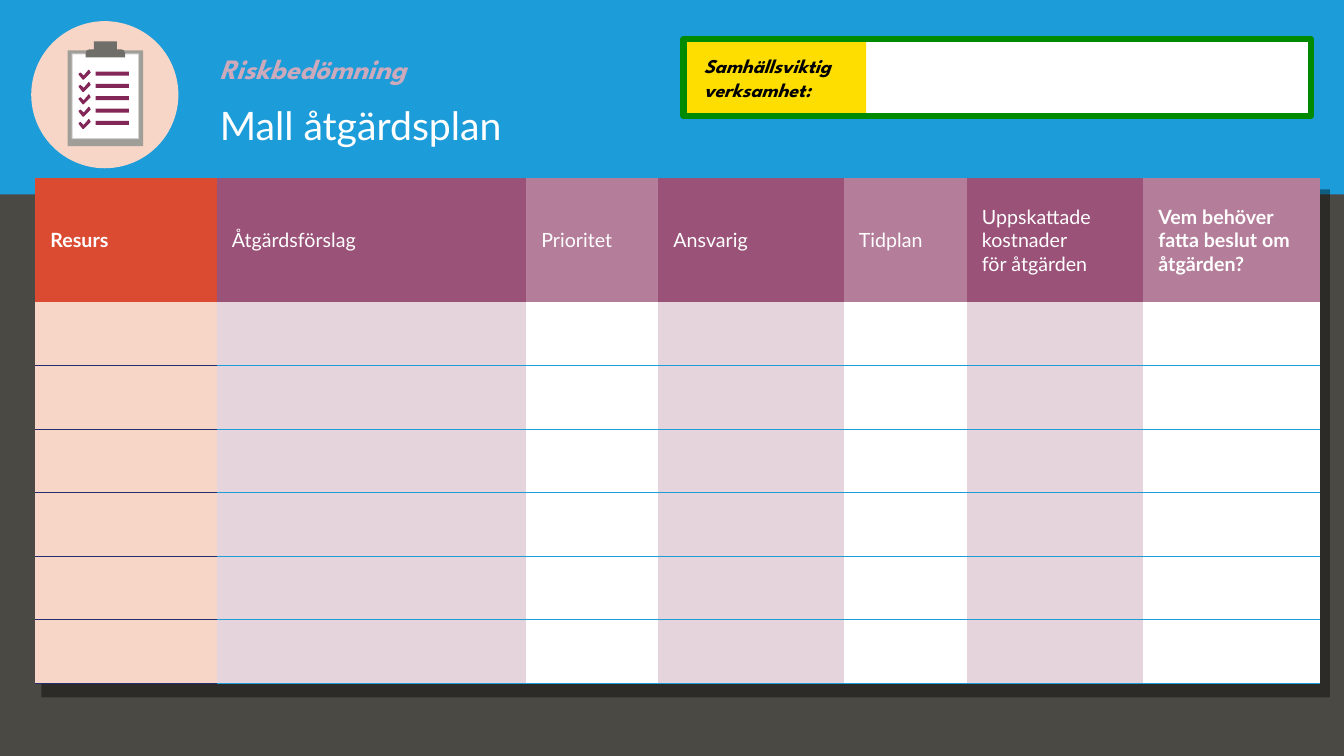
from lxml.etree import SubElement
from pptx import Presentation
from pptx.dml.color import RGBColor
from pptx.enum.shapes import MSO_SHAPE as Shape
from pptx.enum.text import MSO_ANCHOR as Anchor, PP_ALIGN as Align
from pptx.oxml import parse_xml
from pptx.oxml.ns import nsdecls, qn
from pptx.util import Inches, Pt

HEADERS = [
    ("Resurs", 1.8, "DB4B32", "F8D6C7", True),
    ("Åtgärdsförslag", 3.07, "9B5279", "E6D4DD", False),
    ("Prioritet", 1.31, "B47D9A", "FFFFFF", False),
    ("Ansvarig", 1.84, "9B5279", "E6D4DD", False),
    ("Tidplan", 1.22, "B47D9A", "FFFFFF", False),
    ("Uppskattade kostnader \nför åtgärden", 1.75, "9B5279", "E6D4DD", False),
    ("Vem behöver fatta beslut om åtgärden?", 1.75, "B47D9A", "FFFFFF", True),
]
EMPTY_ROWS = 6
HEADER_HEIGHT, ROW_HEIGHT = 1.23, 0.63
TABLE_LEFT, TABLE_TOP = 0.35, 1.77
BLUE, NAVY, PLUM = "1C9CD9", "252E6F", "822757"
TITLE_FORMAT = {"name": "Lato", "size": Pt(28), "bold": False}
TOPIC_FORMAT = {"name": "League Spartan", "size": Pt(20), "bold": True, "italic": True}
LABEL_FORMAT = {"name": "League Spartan", "size": Pt(14), "bold": True, "italic": True}
HEADER_FORMAT = {"name": "Lato", "size": Pt(14)}

CLIP = [(1.23, 0.5), (1.2, 0.49), (1.16, 0.49), (1.16, 0.41), (0.93, 0.41), (0.93, 0.49),
        (0.89, 0.49), (0.86, 0.5), (0.85, 0.53), (0.85, 0.57), (1.24, 0.57), (1.24, 0.53)]
TICK = [(0.12, 0.03), (0.05, 0.1), (0.04, 0.1), (0, 0.05), (0, 0.04), (0.02, 0.03),
        (0.05, 0.06), (0.1, 0), (0.11, 0.01)]
CHECK_COUNT = 5
CHECK_LEFT, LINE_LEFT = 0.78, 0.95
FIRST_CHECK, LAST_CHECK = 0.69, 1.18


def color(value):
    return RGBColor.from_string(value)


def box(shapes, kind, bounds, fill=None, line=None, width=0):
    shape = shapes.add_shape(kind, *map(Inches, bounds))
    paint(shape, fill)
    if line:
        shape.line.color.rgb = color(line)
        shape.line.width = Pt(width)
    return shape


def paint(shape, fill):
    shape.shadow.inherit = False
    shape.line.fill.background()
    if fill:
        shape.fill.solid()
        shape.fill.fore_color.rgb = color(fill)
    else:
        shape.fill.background()


def outline(shapes, points, fill):
    points = [(Inches(x), Inches(y)) for x, y in points]
    builder = shapes.build_freeform(*points[0])
    builder.add_line_segments(points[1:], close=True)
    paint(builder.convert_to_shape(), fill)


def write(frame, text, text_color, font_format, **paragraph_format):
    frame.word_wrap = True
    paragraph = frame.paragraphs[0]
    paragraph.text = text
    for name, value in {"alignment": Align.LEFT, **paragraph_format}.items():
        setattr(paragraph, name, value)
    for run in paragraph.runs:
        for name, value in font_format.items():
            setattr(run.font, name, value)
        run.font.color.rgb = color(text_color)


def set_borders(cell, lines):
    properties = cell._tc.get_or_add_tcPr()
    for index, (side, value) in enumerate(lines.items()):
        properties.insert(index, parse_xml(
            f'<a:{side} {nsdecls("a")} w="12700"><a:solidFill>'
            f'<a:srgbClr val="{value}"/></a:solidFill></a:{side}>'))


def add_plan(shapes):
    bounds = (TABLE_LEFT, TABLE_TOP, sum(header[1] for header in HEADERS),
              HEADER_HEIGHT + EMPTY_ROWS * ROW_HEIGHT)
    table = shapes.add_table(EMPTY_ROWS + 1, len(HEADERS), *map(Inches, bounds)).table
    table.first_row = table.horz_banding = False
    table._tbl.tblPr.find(qn("a:tableStyleId")).text = "{2D5ABB26-0587-4C30-8999-92F81FD0307C}"
    for index, row in enumerate(table.rows):
        row.height = Inches(ROW_HEIGHT if index else HEADER_HEIGHT)
    for column, (text, width, header_fill, body_fill, bold) in enumerate(HEADERS):
        table.columns[column].width = Inches(width)
        border = BLUE if column else NAVY
        for row in range(EMPTY_ROWS + 1):
            cell = table.cell(row, column)
            cell.fill.solid()
            cell.fill.fore_color.rgb = color(body_fill if row else header_fill)
            if row > 1:
                set_borders(cell, {"lnT": border, "lnB": border})
            elif row == 1:
                set_borders(cell, {"lnB": border})
            else:
                cell.vertical_anchor = Anchor.MIDDLE
                for side in ("left", "right", "top", "bottom"):
                    setattr(cell, f"margin_{side}", Inches(0.15))
                write(cell.text_frame, text, "FFFFFF", {**HEADER_FORMAT, "bold": bold})


def add_clipboard(shapes):
    box(shapes, Shape.RECTANGLE, (0.67, 0.5, 0.75, 0.95), "9F9E98")
    box(shapes, Shape.RECTANGLE, (0.71, 0.53, 0.67, 0.85), "CDCCCC")
    box(shapes, Shape.RECTANGLE, (0.72, 0.54, 0.65, 0.83), "FFFFFF")
    outline(shapes, CLIP, "6F6E68")
    step = (LAST_CHECK - FIRST_CHECK) / (CHECK_COUNT - 1)
    for index in range(CHECK_COUNT):
        top = FIRST_CHECK + index * step
        outline(shapes, [(CHECK_LEFT + x, top + y) for x, y in TICK], PLUM)
        box(shapes, Shape.RECTANGLE, (LINE_LEFT, top + 0.02, 0.33, 0.04), PLUM)


def add_service_field(shapes):
    left, top, width, height = 6.78, 0.39, 6.22, 0.76
    box(shapes, Shape.RECTANGLE, (left, top, width, height), "FFFFFF")
    label = box(shapes, Shape.RECTANGLE, (left, top, 1.81, height), "FEDD00")
    label.text_frame.margin_left = Inches(0.2)
    label.text_frame.vertical_anchor = Anchor.MIDDLE
    write(label.text_frame, "Samhällsviktig verksamhet:", "000000", LABEL_FORMAT,
          space_after=Pt(12))
    box(shapes, Shape.RECTANGLE, (left, top, width, height), line="008A01", width=4.5)


def main():
    presentation = Presentation()
    presentation.slide_width, presentation.slide_height = Inches(13.33), Inches(7.5)
    slide = presentation.slides.add_slide(presentation.slide_layouts[5])
    slide.background.fill.solid()
    slide.background.fill.fore_color.rgb = color("4A4944")
    shapes = slide.shapes

    box(shapes, Shape.RECTANGLE, (0, 0, 13.33, 1.93), BLUE)
    box(shapes, Shape.OVAL, (0.31, 0.21, 1.46, 1.46), "F8D6C7")
    topic = shapes.add_textbox(*map(Inches, (2.08, 0.5, 4.44, 0.37)))
    write(topic.text_frame, "Riskbedömning", "CDA9BC", TOPIC_FORMAT, line_spacing=0.9)

    title = shapes.title
    title.left, title.top, title.width, title.height = map(Inches, (2.08, 0.97, 7.16, 0.56))
    title.text_frame.vertical_anchor = Anchor.BOTTOM
    write(title.text_frame, "Mall åtgärdsplan", "FFFFFF", TITLE_FORMAT, line_spacing=0.9)
    shapes._spTree.append(title._element)

    shade = box(shapes, Shape.RECTANGLE, (0.41, 1.88, 12.78, 5.04), "000000")
    shade_color = shade._element.spPr.find(qn("a:solidFill")).find(qn("a:srgbClr"))
    SubElement(shade_color, qn("a:alpha"), val="40000")

    add_plan(shapes)
    add_clipboard(shapes.add_group_shape().shapes)
    add_service_field(shapes.add_group_shape().shapes)
    presentation.save("out.pptx")


if __name__ == "__main__":
    main()
